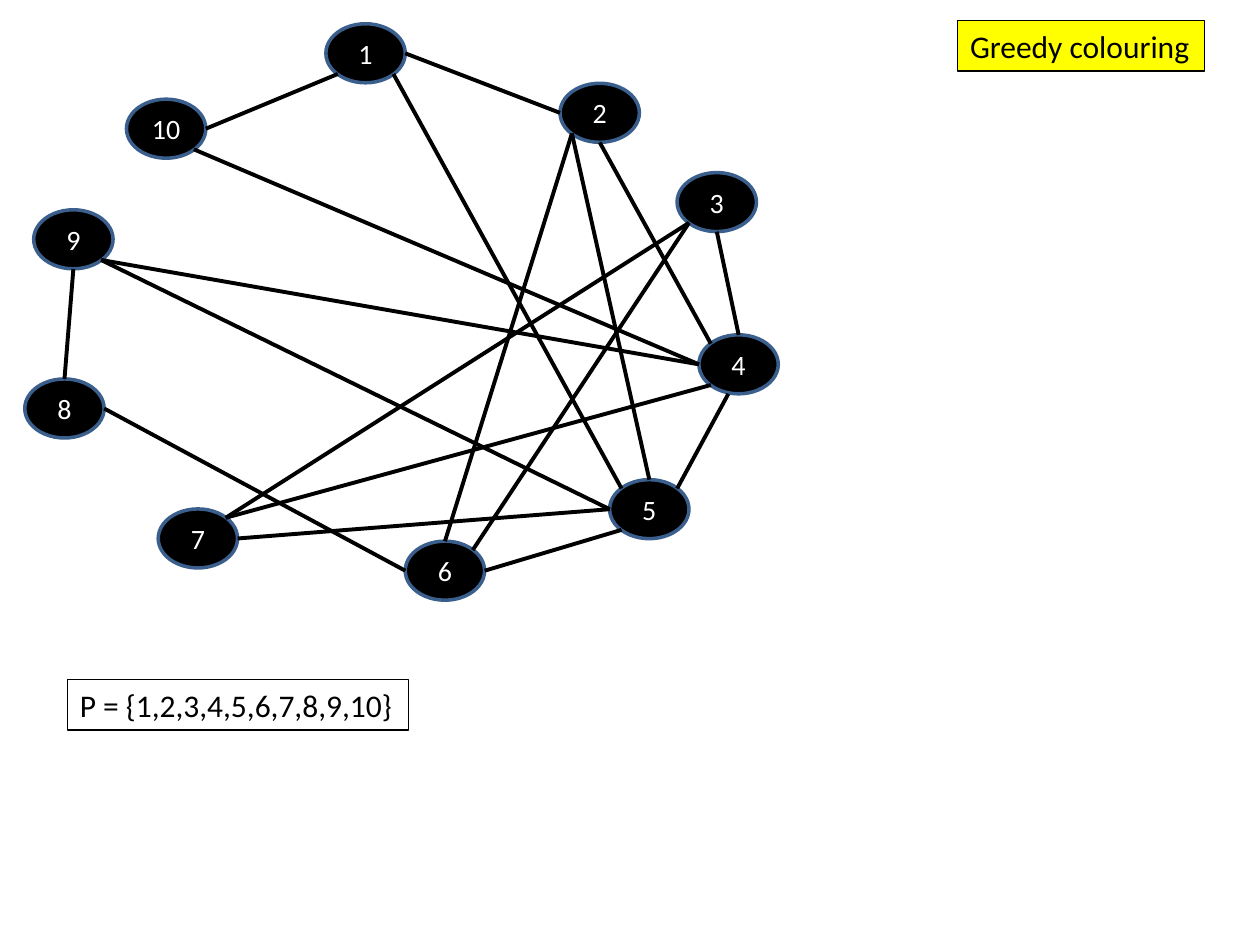
from lxml import etree
from pptx import Presentation
from pptx import util as u
from pptx.dml.color import RGBColor
from pptx.enum import shapes, text
from pptx.oxml.ns import qn

COLOURS = {"ink": "000000", "node_line": "3A5F8C", "label": "FFFFFF", "title": "FFFF00"}
FONT = "Calibri"
NODE_WIDTH, NODE_HEIGHT = 1.6, 1.19
NODES = {
    6: (7.67, 10.43), 4: (13.59, 6.27), 9: (0.18, 3.75), 10: (2.05, 1.52), 1: (6.07, 0),
    5: (11.79, 9.19), 3: (13.15, 3.0), 2: (10.79, 1.2), 7: (2.69, 9.78), 8: (0, 7.16),
}
SITES = {
    "top": (0.5, 0), "bottom": (0.5, 1), "left": (0, 0.5), "right": (1, 0.5),
    "top left": (0.15, 0.15), "top right": (0.85, 0.15),
    "bottom left": (0.15, 0.85), "bottom right": (0.85, 0.85),
    "lower edge": (0.37, 1),
}
EDGES = [
    (1, "right", 2, "left"), (1, "bottom right", 5, "top left"),
    (10, "right", 1, "bottom left"), (2, "bottom", 4, "top left"),
    (8, "top", 9, "bottom"), (5, "top", 2, "bottom left"),
    (2, "bottom left", 6, "top"), (4, "top", 3, "bottom"),
    (3, "bottom left", 6, "top right"), (3, "bottom left", 7, "top right"),
    (5, "top right", 4, "lower edge"), (7, "top right", 4, "bottom left"),
    (9, "bottom right", 4, "left"), (10, "bottom right", 4, "left"),
    (6, "right", 5, "bottom left"), (7, "right", 5, "left"),
    (9, "bottom right", 5, "left"), (6, "left", 8, "right"),
]


def apply(target, values):
    """Set each attribute of the target from a dict of values."""
    for name, value in values.items():
        setattr(target, name, value)


def colour(name):
    """Return the named colour."""
    return RGBColor.from_string(COLOURS[name])


def set_line(line, name, points):
    """Give a line its colour and width."""
    line.color.rgb = colour(name)
    line.width = u.Pt(points)


def set_fill(shape, name):
    """Give a shape a solid fill."""
    shape.fill.solid()
    shape.fill.fore_color.rgb = colour(name)


def write_text(shape, wording, size, name, alignment, frame_format):
    """Write one formatted paragraph in a shape."""
    frame = shape.text_frame
    frame.text = wording
    apply(frame, frame_format)
    paragraph = frame.paragraphs[0]
    paragraph.alignment = alignment
    apply(paragraph.runs[0].font, {"name": FONT, "size": u.Pt(size)})
    paragraph.runs[0].font.color.rgb = colour(name)


def add_node(group, number, left, top):
    """Add a numbered ellipse to the graph."""
    node = group.shapes.add_shape(
        shapes.MSO_SHAPE.OVAL, u.Cm(left), u.Cm(top), u.Cm(NODE_WIDTH), u.Cm(NODE_HEIGHT))
    node.shadow.inherit = False
    set_fill(node, "ink")
    set_line(node.line, "node_line", 2)
    write_text(node, str(number), 16, "label", text.PP_ALIGN.CENTER,
               {"vertical_anchor": text.MSO_ANCHOR.MIDDLE, "word_wrap": True})
    return node


def site_point(node, site):
    """Return the point of a node's outline at a named site."""
    across, down = SITES[site]
    return int(node.left + across * node.width), int(node.top + down * node.height)


def add_edge(group, start, end):
    """Add a straight edge between two points."""
    edge = group.shapes.add_connector(shapes.MSO_CONNECTOR.STRAIGHT, *start, *end)
    set_line(edge.line, "ink", 2.25)
    etree.SubElement(edge._element.spPr, qn("a:effectLst"))


def add_graph(slide, left, top):
    """Place the grouped graph with its upper left corner at a point."""
    group = slide.shapes.add_group_shape()
    nodes = {number: add_node(group, number, left + x, top + y)
             for number, (x, y) in NODES.items()}
    for first, first_site, second, second_site in EDGES:
        add_edge(group, site_point(nodes[first], first_site),
                 site_point(nodes[second], second_site))


def format_box(shape, wording):
    """Outline a box and write its single line of text."""
    set_line(shape.line, "ink", 0.75)
    write_text(shape, wording, 18, "ink", text.PP_ALIGN.LEFT,
               {"vertical_anchor": text.MSO_ANCHOR.TOP, "word_wrap": False,
                "auto_size": text.MSO_AUTO_SIZE.NONE})


def add_title(slide, left, top, width, height):
    """Place the highlighted title."""
    title = slide.shapes.title
    apply(title, {"left": u.Cm(left), "top": u.Cm(top),
                  "width": u.Cm(width), "height": u.Cm(height)})
    set_fill(title, "title")
    format_box(title, "Greedy colouring")


def add_vertex_order(slide, left, top, width, height):
    """Place the vertex set in its order."""
    order = slide.shapes.add_textbox(u.Cm(left), u.Cm(top), u.Cm(width), u.Cm(height))
    vertices = ",".join(str(number) for number in sorted(NODES))
    format_box(order, f"P = {{{vertices}}}")


def main():
    """Build and save the slide."""
    presentation = Presentation()
    apply(presentation, {"slide_width": u.Cm(25.4), "slide_height": u.Cm(19.05)})
    slide = presentation.slides.add_slide(presentation.slide_layouts[5])
    add_graph(slide, 0.5, 0.48)
    add_vertex_order(slide, 1.36, 13.7, 6.88, 1.02)
    add_title(slide, 19.3, 0.41, 4.98, 1.02)
    presentation.save("out.pptx")


if __name__ == "__main__":
    main()
